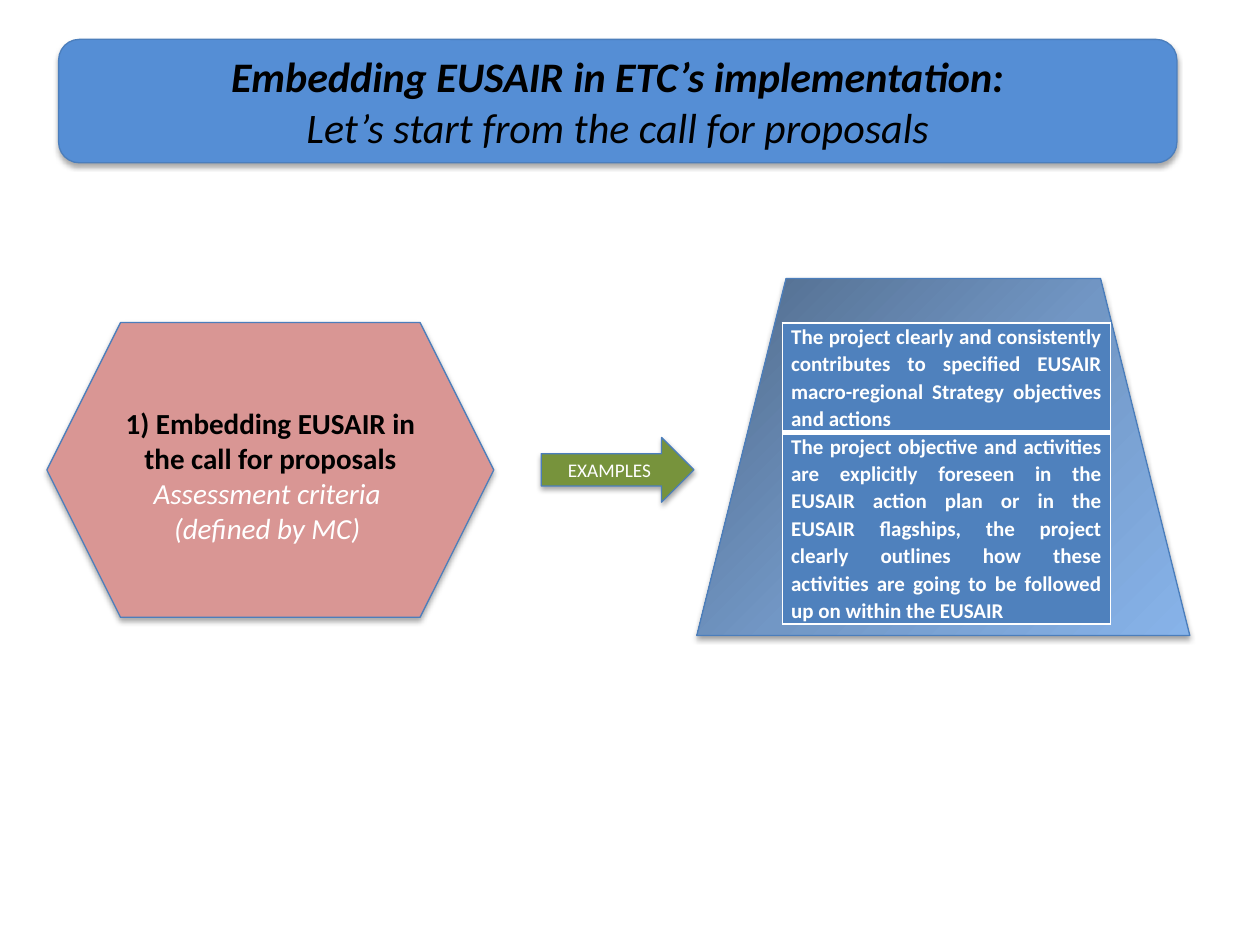
from copy import deepcopy

from lxml import etree
from pptx import Presentation
from pptx.dml.color import RGBColor
from pptx.enum.shapes import MSO_SHAPE as Shape
from pptx.enum.text import MSO_ANCHOR as Anchor, PP_ALIGN as Align
from pptx.oxml import parse_xml
from pptx.oxml.ns import nsdecls, qn
from pptx.util import Pt

BLACK, WHITE = "000000", "FFFFFF"


def color(value):
    """Return the colour for a hex string."""
    return RGBColor.from_string(value)


class SlideStyle:
    """Holds the style of the deck and the slide being built."""

    font = "Calibri"
    outline = "4B7EBC"
    cell_fill = "4F81BD"

    def __init__(self, page):
        self.page = page

    def text_line(self, para, text, size, ink, bold=False, italic=False, align=Align.CENTER):
        """Fill a paragraph and format its run."""
        para.text = text
        para.alignment = align
        for span in para.runs:
            font = span.font
            font.name, font.size, font.bold, font.italic = self.font, Pt(size), bold, italic
            font.color.rgb = color(ink)

    def block(self, kind, place, fill, lines=(), top_inset=3.6):
        """Add an outlined, shadowed shape with centred lines of text."""
        box = self.page.shapes.add_shape(kind, *map(Pt, place))
        if isinstance(fill, str):
            box.fill.solid()
            box.fill.fore_color.rgb = color(fill)
        else:
            self.gradient(box, fill)
        box.line.color.rgb = color(self.outline)
        box.line.width = Pt(0.75)
        self.shadow(box)
        frame = box.text_frame
        frame.word_wrap = True
        frame.vertical_anchor = Anchor.MIDDLE
        frame.margin_top = Pt(top_inset)
        for index, line in enumerate(lines):
            para = frame.add_paragraph() if index else frame.paragraphs[0]
            self.text_line(para, *line)

    def gradient(self, box, shades):
        """Spread the shades evenly from top left to bottom right."""
        box.fill.gradient()
        box.fill.gradient_angle = 315
        stops = box._element.spPr.find(".//" + qn("a:gsLst"))
        while len(stops) < len(shades):
            stops.append(deepcopy(stops[0]))
        for index, (stop, shade) in enumerate(zip(box.fill.gradient_stops, shades)):
            stop.position = index / (len(shades) - 1)
            stop.color.rgb = color(shade)

    def shadow(self, box):
        """Give a shape a soft shadow straight below it."""
        box.shadow.inherit = False
        effects = box._element.spPr.find(qn("a:effectLst"))
        outer = etree.SubElement(effects, qn("a:outerShdw"), blurRad=str(Pt(3.1)),
                                 dist=str(Pt(1.8)), dir="5400000", rotWithShape="0")
        shade = etree.SubElement(outer, qn("a:srgbClr"), val=BLACK)
        etree.SubElement(shade, qn("a:alpha"), val="35000")

    def borders(self, cell, widths):
        """Draw white borders in the order left, right, top, bottom."""
        properties = cell._tc.get_or_add_tcPr()
        for index, (side, width) in enumerate(zip("LRTB", widths)):
            properties.insert(index, parse_xml(
                f'<a:ln{side} {nsdecls("a")} w="{Pt(width)}"><a:solidFill>'
                f'<a:srgbClr val="{WHITE}"/></a:solidFill></a:ln{side}>'))

    def criteria(self, place, rows):
        """Add a one-column table from rows of height, border widths and text."""
        table = self.page.shapes.add_table(len(rows), 1, *map(Pt, place)).table
        table.first_row = table.horz_banding = False
        for index, (height, widths, text) in enumerate(rows):
            table.rows[index].height = Pt(height)
            cell = table.cell(index, 0)
            cell.margin_left = cell.margin_right = Pt(5)
            cell.margin_top = cell.margin_bottom = 0
            cell.fill.solid()
            cell.fill.fore_color.rgb = color(self.cell_fill)
            self.borders(cell, widths)
            para = cell.text_frame.paragraphs[0]
            self.text_line(para, text, 12, WHITE, bold=True, align=Align.JUSTIFY)
            para.line_spacing = 1.07


def main():
    """Build the slide and save it."""
    deck = Presentation()
    deck.slide_width, deck.slide_height = Pt(720), Pt(540)
    style = SlideStyle(deck.slides.add_slide(deck.slide_layouts[6]))

    style.block(Shape.ROUNDED_RECTANGLE, (33.5, 22.5, 639, 70.5), "558ED5", [
        ("Embedding EUSAIR in ETC’s implementation:", 24, BLACK, True, True),
        ("Let’s start from the call for proposals", 24, BLACK, False, True),
    ])
    style.block(Shape.HEXAGON, (26.8, 184.3, 255.4, 168.5), "D99694", [
        ("1) Embedding EUSAIR in the call for proposals", 16.6, BLACK, True),
        ("Assessment criteria ", 16.6, WHITE, False, True),
        ("(defined by MC) ", 16.6, WHITE, False, True),
    ], top_inset=10)
    style.block(Shape.RIGHT_ARROW, (309.3, 250, 87.3, 37), "77933C",
                [("EXAMPLES", 11, WHITE)])
    style.block(Shape.TRAPEZOID, (398.2, 159.1, 281.7, 204), ("506A8A", "7297C5", "87B3E9"))
    style.criteria((447.1, 184.5, 187.4, 170), [
        (60.5, (1, 1, 1, 3),
         "The project clearly and consistently contributes to specified EUSAIR "
         "macro-regional Strategy objectives and actions"),
        (108, (1, 1, 3, 1),
         "The project objective and activities are explicitly foreseen in the EUSAIR "
         "action plan or in the EUSAIR flagships, the project clearly outlines how these "
         "activities are going to be followed up on within the EUSAIR"),
    ])
    deck.save("out.pptx")


if __name__ == "__main__":
    main()
